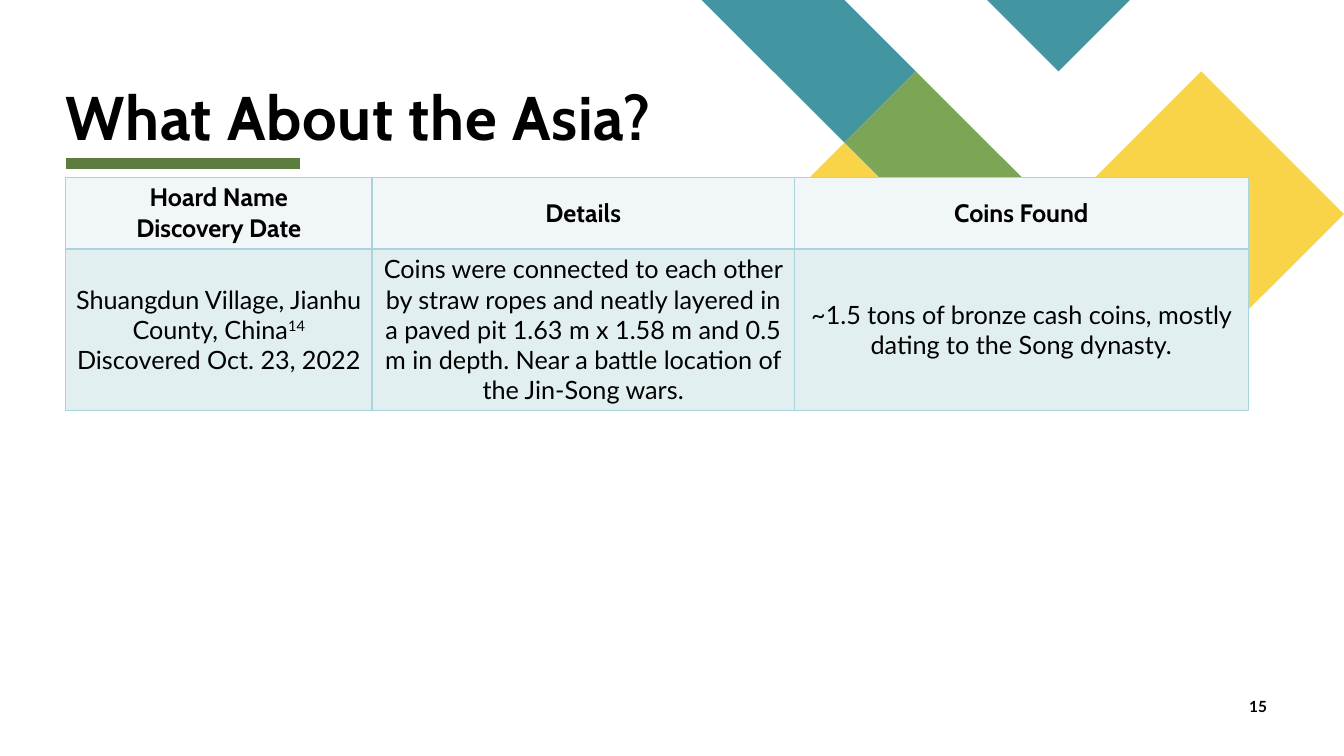
from lxml import etree
from pptx import Presentation
from pptx.dml.color import RGBColor
from pptx.enum.shapes import MSO_CONNECTOR
from pptx.enum.text import MSO_ANCHOR, PP_ALIGN
from pptx.oxml.ns import qn
from pptx.util import Inches, Pt

STRAIGHT = MSO_CONNECTOR.STRAIGHT
TOP, MIDDLE, BOTTOM = MSO_ANCHOR.TOP, MSO_ANCHOR.MIDDLE, MSO_ANCHOR.BOTTOM
CENTER = PP_ALIGN.CENTER

COLORS = {
    "teal": "4495A2", "yellow": "F9D448", "green": "7CA655", "rule": "5D7D40",
    "text": "000000", "border": "A9D4DB", "header": "F1F7F8", "body": "E2EFF1",
}
TITLE_FONT = {"name": "Cabin", "size": Pt(44), "bold": True}
HEADER_FONT = {"name": "Cabin", "size": Pt(18), "bold": True}
BODY_FONT = {"name": "Lato", "size": Pt(18), "bold": False}
NUMBER_FONT = {"name": "Lato", "size": Pt(11), "bold": True}

# Outlines in grid steps from the top left of the pattern
DIAMOND_PATTERN = [
    ("teal", [[(3, 1), (2, 0), (0, 0), (2, 2)], [(6, 4), (5, 3), (4, 4), (5, 5)]]),
    ("yellow", [[(2, 2), (1, 3), (3, 5), (4, 4)]]),
    ("teal", [[(6, 0), (4, 0), (5, 1)]]),
    ("green", [[(3, 1), (2, 2), (4, 4), (5, 3)]]),
    ("yellow", [[(9, 3), (7, 1), (5, 3), (7, 5)]]),
]
GRID_COLUMNS = 9

COLUMN_WIDTHS = [3.04, 4.19, 4.5]
ROW_HEIGHTS = [0.71, 1.6]
# Each cell is a list of paragraphs; each paragraph is a list of (text, superscript)
HOARD_ROWS = [
    [
        [[("Hoard Name", False)], [("Discovery Date", False)]],
        [[("Details", False)]],
        [[("Coins Found", False)]],
    ],
    [
        [[("Shuangdun Village, Jianhu County, China", False), ("14", True)],
         [("Discovered Oct. 23, 2022", False)]],
        [[("Coins were connected to each other by straw ropes and neatly layered in "
           "a paved pit 1.63 m x 1.58 m and 0.5 m in depth. Near a battle location "
           "of the Jin-Song wars.", False)]],
        [[("~1.5 tons of bronze cash coins, mostly dating to the Song dynasty.", False)]],
    ],
]


def color(name):
    return RGBColor.from_string(COLORS[name])


def add_run(paragraph, text, font_format):
    run = paragraph.add_run()
    run.text = text
    for attribute, value in font_format.items():
        setattr(run.font, attribute, value)
    run.font.color.rgb = color("text")
    return run


def add_diamonds(slide, left, top, width):
    step = Inches(width) / GRID_COLUMNS
    for fill, outlines in DIAMOND_PATTERN:
        builder = slide.shapes.build_freeform(*outlines[0][0], scale=step)
        builder.add_line_segments(outlines[0][1:], close=True)
        for outline in outlines[1:]:
            builder.move_to(*outline[0])
            builder.add_line_segments(outline[1:], close=True)
        shape = builder.convert_to_shape(Inches(left), Inches(top))
        shape.shadow.inherit = False
        shape.fill.solid()
        shape.fill.fore_color.rgb = color(fill)
        shape.line.fill.background()


def add_text(slide, box, text, font_format, anchor):
    """Add a one-line text box without insets and return its paragraph and run."""
    frame = slide.shapes.add_textbox(*map(Inches, box)).text_frame
    frame_format = {"word_wrap": True, "vertical_anchor": anchor, "margin_left": 0,
                    "margin_right": 0, "margin_top": 0, "margin_bottom": 0}
    for attribute, value in frame_format.items():
        setattr(frame, attribute, value)
    paragraph = frame.paragraphs[0]
    return paragraph, add_run(paragraph, text, font_format)


def add_title(slide, left, top, width, height):
    """Add the title with the short rule beneath it."""
    paragraph, run = add_text(slide, (left, top, width, height),
                              "What About the Asia?", TITLE_FONT, BOTTOM)
    paragraph.line_spacing = 0.8
    run.font._element.set("spc", "50")
    rule_y = Inches(top + height + 0.11)
    rule = slide.shapes.add_connector(STRAIGHT, Inches(left), rule_y,
                                      Inches(left + 2.33), rule_y)
    rule.line.color.rgb = color("rule")
    rule.line.width = Pt(8)
    etree.SubElement(rule._element.spPr, qn("a:effectLst"))


def add_borders(cell):
    properties = cell._tc.get_or_add_tcPr()
    for side in ("lnL", "lnR", "lnT", "lnB"):
        line = etree.SubElement(properties, qn("a:" + side), w=str(Pt(1)))
        fill = etree.SubElement(line, qn("a:solidFill"))
        etree.SubElement(fill, qn("a:srgbClr"), val=COLORS["border"])


def fill_cell(cell, paragraphs, font_format, fill):
    add_borders(cell)
    cell.fill.solid()
    cell.fill.fore_color.rgb = color(fill)
    cell.vertical_anchor = MIDDLE
    frame = cell.text_frame
    for index, runs in enumerate(paragraphs):
        paragraph = frame.add_paragraph() if index else frame.paragraphs[0]
        paragraph.alignment = CENTER
        for text, superscript in runs:
            run = add_run(paragraph, text, font_format)
            if superscript:
                run.font._element.set("baseline", "30000")


def add_hoard_table(slide, left, top):
    table = slide.shapes.add_table(
        len(ROW_HEIGHTS), len(COLUMN_WIDTHS), Inches(left), Inches(top),
        Inches(sum(COLUMN_WIDTHS)), Inches(sum(ROW_HEIGHTS))).table
    table.horz_banding = False
    for column, width in zip(table.columns, COLUMN_WIDTHS):
        column.width = Inches(width)
    styles = [(HEADER_FONT, "header"), (BODY_FONT, "body")]
    for row, height, contents, style in zip(table.rows, ROW_HEIGHTS, HOARD_ROWS, styles):
        row.height = Inches(height)
        for cell, paragraphs in zip(row.cells, contents):
            fill_cell(cell, paragraphs, *style)


def main():
    presentation = Presentation()
    presentation.slide_width = Inches(13.33)
    presentation.slide_height = Inches(7.5)
    slide = presentation.slides.add_slide(presentation.slide_layouts[6])
    add_diamonds(slide, 6.96, 0, 6.37)
    add_title(slide, 0.65, 0.21, 7.86, 1.3)
    add_hoard_table(slide, 0.65, 1.76)
    add_text(slide, (12.39, 6.92, 0.57, 0.27), "15", NUMBER_FONT, TOP)
    presentation.save("out.pptx")


if __name__ == "__main__":
    main()
